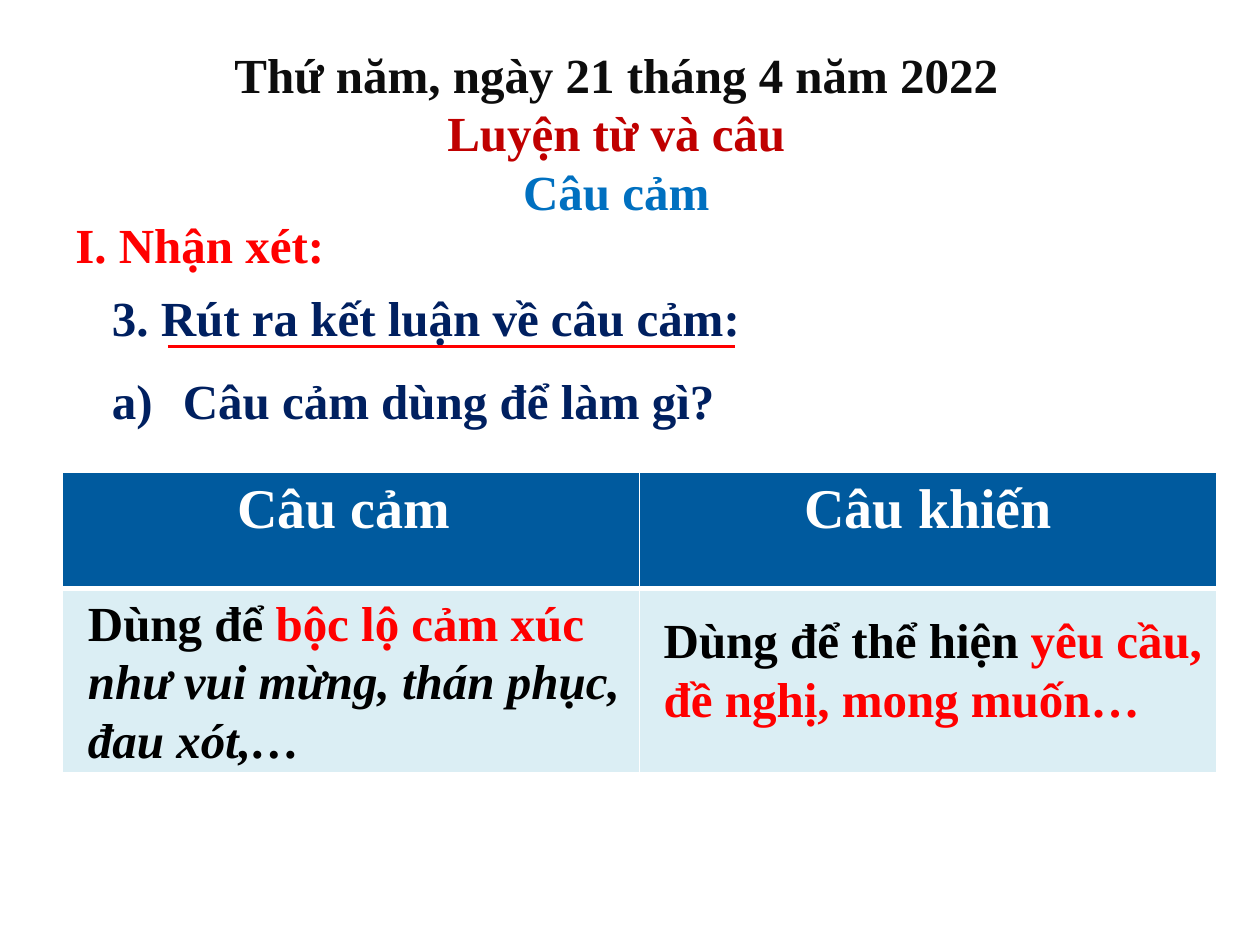
from lxml.etree import SubElement
from pptx import Presentation
from pptx.dml.color import RGBColor
from pptx.enum.shapes import MSO_CONNECTOR, MSO_SHAPE
from pptx.enum.text import MSO_ANCHOR, MSO_AUTO_SIZE, PP_ALIGN as AL
from pptx.oxml.ns import qn
from pptx.util import Pt

FONT = "Times New Roman"
RED, NAVY, BLACK, WHITE = "FF0000", "002060", "000000", "FFFFFF"


def color(hex_code):
    return RGBColor.from_string(hex_code)


def add_run(p, text, hex_code, size=28, italic=False):
    r = p.add_run()
    r.text = text
    f = r.font
    f.name, f.size, f.bold, f.italic = FONT, Pt(size), True, italic
    f.color.rgb = color(hex_code)


def fill_text(tf, paragraphs, align=AL.LEFT, wrap=True):
    """Each paragraph is a list of runs: (text, colour[, size, italic])."""
    tf.word_wrap = wrap
    tf.auto_size = MSO_AUTO_SIZE.SHAPE_TO_FIT_TEXT
    tf.vertical_anchor = MSO_ANCHOR.TOP
    for i, runs in enumerate(paragraphs):
        p = tf.add_paragraph() if i else tf.paragraphs[0]
        p.alignment = align
        for run in runs:
            add_run(p, *run)


def add_text(s, box, paragraphs, align=AL.LEFT, wrap=True):
    tf = s.shapes.add_textbox(*map(Pt, box)).text_frame
    fill_text(tf, paragraphs, align, wrap)
    return tf


def add_heading(s, box, text):
    sp = s.shapes.add_shape(MSO_SHAPE.RECTANGLE, *map(Pt, box))
    sp.shadow.inherit = False
    sp.fill.solid()
    sp.fill.fore_color.rgb = color(WHITE)
    sp.line.fill.background()
    fill_text(sp.text_frame, [[(text, RED)]], wrap=False)


def number_letter(p, indent):
    pPr = p._p.get_or_add_pPr()
    pPr.set("marL", str(Pt(indent)))
    pPr.set("indent", str(-Pt(indent)))
    SubElement(pPr, qn("a:buFont"), typeface="+mj-lt")
    SubElement(pPr, qn("a:buAutoNum"), type="alphaLcParenR")


def add_line(s, x1, x2, y):
    line = s.shapes.add_connector(MSO_CONNECTOR.STRAIGHT, Pt(x1), Pt(y), Pt(x2), Pt(y))
    line.line.color.rgb = color(RED)
    line.line.width = Pt(2.25)
    SubElement(line._element.spPr, qn("a:effectLst"))


def style_cell(cell, fill, borders):
    tcPr = cell._tc.get_or_add_tcPr()
    for side, width in borders.items():
        ln = SubElement(tcPr, qn("a:ln" + side), w=str(Pt(width)))
        SubElement(SubElement(ln, qn("a:solidFill")), qn("a:srgbClr"), val=WHITE)
    cell.fill.solid()
    cell.fill.fore_color.rgb = color(fill)


def add_comparison_table(s, box, headers, row_heights):
    table = s.shapes.add_table(2, len(headers), *map(Pt, box)).table
    for row, height in zip(table.rows, row_heights):
        row.height = Pt(height)
    for col, text in enumerate(headers):
        head, body = table.cell(0, col), table.cell(1, col)
        style_cell(head, "005A9E", {"L": 1, "R": 1, "T": 1, "B": 3})
        style_cell(body, "DBEEF4", {"L": 1, "R": 1, "T": 3, "B": 1})
        p = head.text_frame.paragraphs[0]
        p.alignment = AL.CENTER
        add_run(p, text, WHITE, 32)


def main():
    prs = Presentation()
    prs.slide_width, prs.slide_height = Pt(720), Pt(540)
    s = prs.slides.add_slide(prs.slide_layouts[6])

    # Section heading
    add_heading(s, (36, 118.8, 158.4, 41), "I. Nhận xét:")

    # Question, with its underline
    tf = add_text(s, (56.9, 160.6, 697.7, 92.2), [
        [("3. Rút ra kết luận về câu cảm:", NAVY)],
        [("Câu cảm dùng để làm gì?", NAVY)],
    ])
    question = tf.paragraphs[1]
    question.space_before = Pt(14)
    number_letter(question, 40.5)
    add_line(s, 96, 420, 198)

    # Date and lesson title
    add_text(s, (86.4, 21.6, 531.4, 108.7), [
        [("Thứ năm, ngày 21 tháng 4 năm 2022", "0D0D0D")],
        [("Luyện từ và câu", "C00000")],
        [("Câu cảm", "0070C0")],
    ], AL.CENTER)

    # Comparison table, with the answers laid over its second row
    add_comparison_table(s, (35.5, 270, 660, 171.4),
                         ["Câu cảm ", "Câu khiến"], (66.2, 105.2))
    add_text(s, (43.2, 334.8, 329, 108.7), [
        [("Dùng để ", BLACK), ("bộc lộ cảm xúc ", RED)],
        [("như vui mừng, thán phục, ", BLACK, 28, True)],
        [("đau xót,…", BLACK, 28, True)],
    ], AL.JUSTIFY, wrap=False)
    add_text(s, (372.2, 344.9, 360, 74.9), [
        [("Dùng để thể hiện ", BLACK), ("yêu cầu, ", RED)],
        [("đề nghị, mong muốn…", RED)],
    ], AL.JUSTIFY)

    prs.save("out.pptx")


if __name__ == "__main__":
    main()
